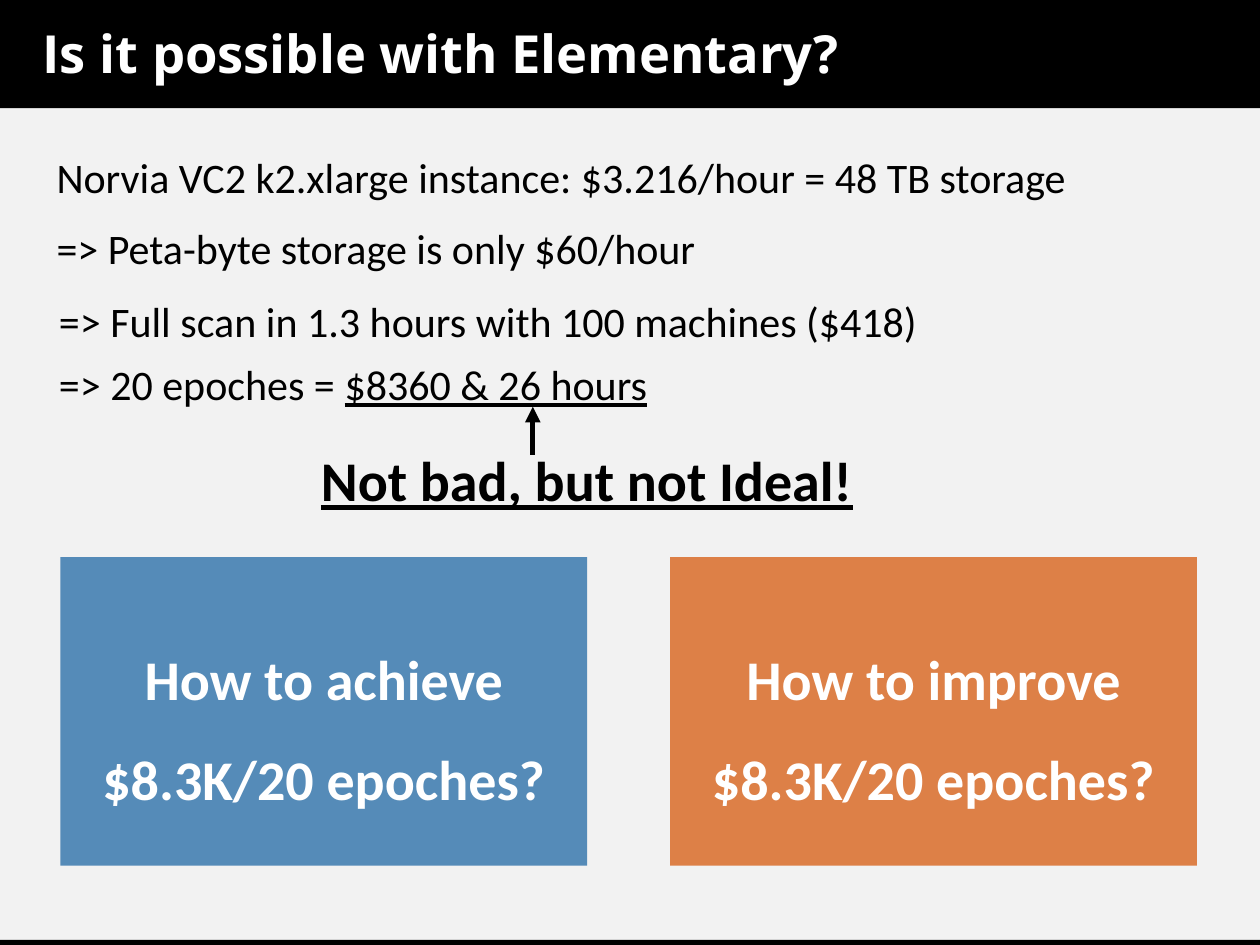
"""Build the slide on the cost of training with elementary means."""
from lxml.etree import SubElement
from pptx import Presentation
from pptx.dml.color import RGBColor
from pptx.enum.shapes import MSO_CONNECTOR as Connector, MSO_SHAPE as Shape
from pptx.enum.text import MSO_ANCHOR as Anchor, PP_ALIGN as Align
from pptx.oxml.ns import qn
from pptx.util import Cm, Pt

COLORS = {"paper": "F2F2F2", "black": "000000", "white": "FFFFFF",
          "blue": "558BB8", "orange": "DD8047"}
BODY = {"name": "Calibri", "size": Pt(24)}
LOUD = {"name": "Calibri", "size": Pt(32), "bold": True}
TITLE = {"name": "Open Sans", "size": Pt(30), "bold": True}


def add_span(para, text, color, formats):
    span = para.add_run()
    span.text = text
    span.font.color.rgb = RGBColor.from_string(COLORS[color])
    for name, value in formats.items():
        setattr(span.font, name, value)


def add_block(page, left, top, width, height, color):
    block = page.shapes.add_shape(Shape.RECTANGLE, Cm(left), Cm(top), Cm(width), Cm(height))
    block.shadow.inherit = False
    block.fill.solid()
    block.fill.fore_color.rgb = RGBColor.from_string(COLORS[color])
    block.line.fill.background()
    return block


deck = Presentation()
deck.slide_width, deck.slide_height = Cm(25.4), Cm(19.05)
page = deck.slides.add_slide(deck.slide_layouts[6])
page.background.fill.solid()
page.background.fill.fore_color.rgb = RGBColor.from_string(COLORS["paper"])

for top, height in [(0, 2.18), (18.95, 0.1)]:
    add_block(page, 0, top, 25.4, height, "black")

title = page.shapes.add_textbox(Cm(0.61), Cm(0.05), Cm(22.86), Cm(2.03))
title.text_frame.word_wrap = True
title.text_frame.vertical_anchor = Anchor.MIDDLE
add_span(title.text_frame.paragraphs[0], "Is it possible with Elementary?", "white", TITLE)

underlined = {"underline": True}
lines = [
    (0.89, 2.92, 23.24, 1.27,
     [("Norvia VC2 k2.xlarge instance: $3.216/hour = 48 TB storage", BODY)]),
    (0.89, 4.37, 14.25, 1.27, [("=> Peta-byte storage is only $60/hour", BODY)]),
    (0.94, 5.84, 19.58, 1.27,
     [("=> Full scan in 1.3 hours with 100 machines ($418)", BODY)]),
    (0.94, 7.11, 13.69, 1.27,
     [("=> 20 epoches = ", BODY), ("$8360 & 26 hours", BODY | underlined)]),
    (6.22, 8.86, 11.96, 1.63, [("Not bad, but not Ideal!", LOUD | underlined)]),
]
for left, top, width, height, spans in lines:
    box = page.shapes.add_textbox(Cm(left), Cm(top), Cm(width), Cm(height))
    box.text_frame.word_wrap = False
    for text, formats in spans:
        add_span(box.text_frame.paragraphs[0], text, "black", formats)

arrow = page.shapes.add_connector(Connector.STRAIGHT, Cm(10.74), Cm(9.17), Cm(10.74), Cm(8.2))
arrow.line.width = Pt(3)
arrow.line.color.rgb = RGBColor.from_string(COLORS["black"])
SubElement(arrow.line._get_or_add_ln(), qn("a:tailEnd"), type="triangle")
SubElement(arrow._element.spPr, qn("a:effectLst"))

cards = [("How to achieve $8.3K/20 epoches?", "blue"),
         ("How to improve $8.3K/20 epoches?", "orange")]
margins = {"margin_left": Cm(0.25), "margin_right": Cm(0.25),
           "margin_top": Cm(0.05), "margin_bottom": Cm(0.05)}
for index, (question, color) in enumerate(cards):
    card = add_block(page, 1.22 + index * 12.29, 11.23, 10.62, 6.22, color)
    frame = card.text_frame
    frame.word_wrap = True
    frame.vertical_anchor = Anchor.MIDDLE
    for name, value in margins.items():
        setattr(frame, name, value)
    para = frame.paragraphs[0]
    para.alignment, para.line_spacing = Align.CENTER, 1.5
    add_span(para, question, "white", LOUD)

deck.save("out.pptx")
